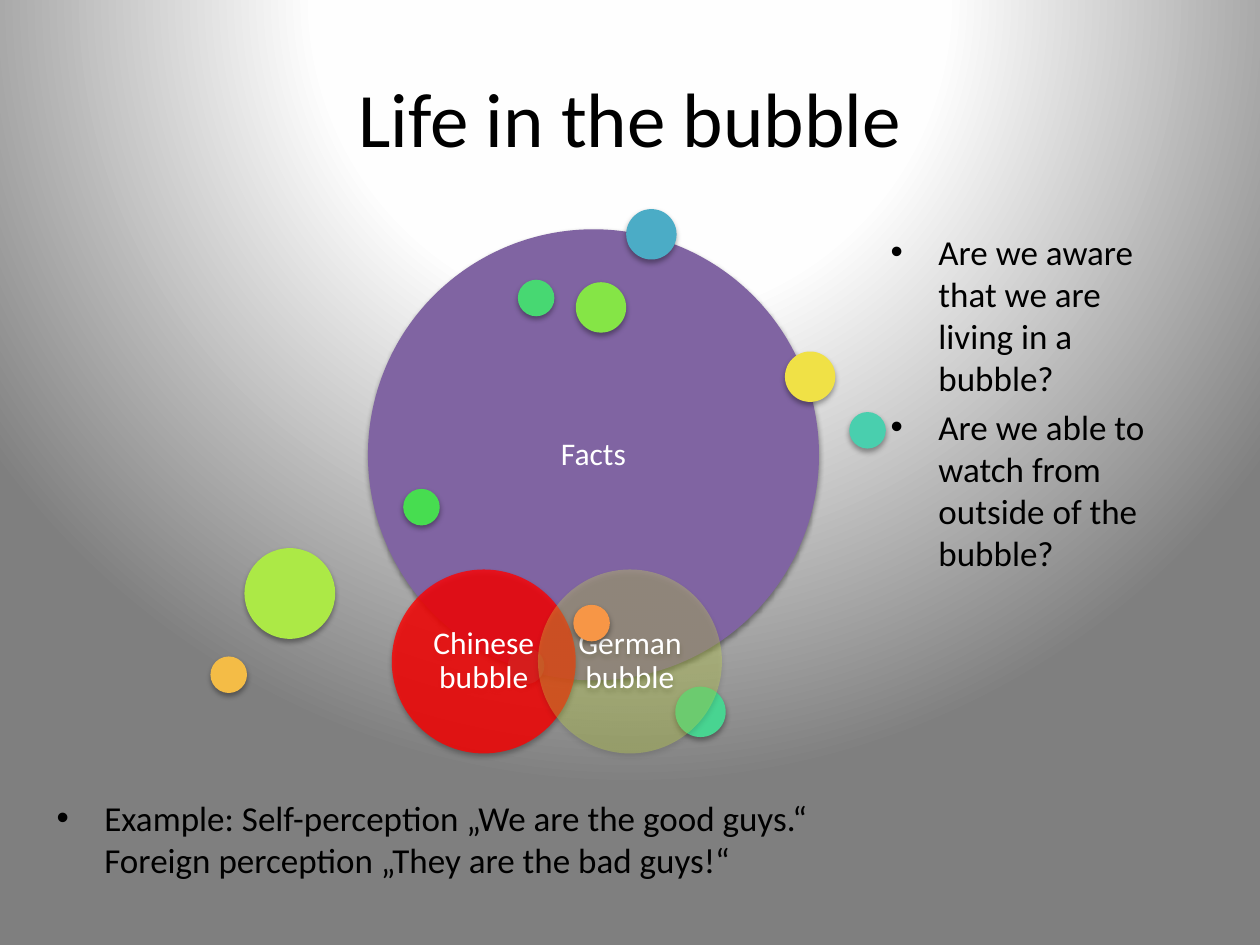
from collections import namedtuple

from lxml import etree
from pptx import Presentation
from pptx.dml.color import RGBColor
from pptx.enum.shapes import MSO_SHAPE
from pptx.enum.text import MSO_ANCHOR, PP_ALIGN
from pptx.oxml import parse_xml
from pptx.oxml.ns import nsdecls, qn
from pptx.util import Inches, Pt

OVAL = MSO_SHAPE.OVAL
MIDDLE = MSO_ANCHOR.MIDDLE
CENTER = PP_ALIGN.CENTER

COLUMNS, ROWS = 100, 75
CELL = Inches(0.1)
FONT = "Calibri"
BLACK = RGBColor(0, 0, 0)
WHITE = RGBColor(255, 255, 255)
PURPLE = RGBColor(0x80, 0x64, 0xA2)
BLUE = RGBColor(0x4B, 0xAC, 0xC6)
CYAN = RGBColor(0x4A, 0xCB, 0xC8)
TEAL = RGBColor(0x49, 0xCF, 0xAE)
MINT = RGBColor(0x48, 0xD4, 0x91)
JADE = RGBColor(0x47, 0xD8, 0x72)
GREEN = RGBColor(0x47, 0xDD, 0x50)
RED = RGBColor(0xFF, 0, 0)
LIME = RGBColor(0x85, 0xE5, 0x46)
CHARTREUSE = RGBColor(0xAC, 0xE9, 0x46)
OLIVE = RGBColor(0xD5, 0xEC, 0x46)
YELLOW = RGBColor(0xF0, 0xE1, 0x46)
AMBER = RGBColor(0xF4, 0xBC, 0x46)
ORANGE = RGBColor(0xF7, 0x96, 0x46)

Box = namedtuple("Box", "left top width height")
Bubble = namedtuple("Bubble", "column row size color label opacity", defaults=("", 100))

SMALL, MEDIUM, LARGE, CULTURE, WORLD = 2.9, 4, 7.2, 14.6, 35.8
BUBBLES = [
    Bubble(12.5, 1.6, WORLD, PURPLE, "Facts"),
    Bubble(33, 0, MEDIUM, BLUE),
    Bubble(23.6, 34.8, SMALL, CYAN),
    Bubble(50.7, 16.1, SMALL, TEAL),
    Bubble(36.9, 37.9, MEDIUM, MINT),
    Bubble(24.4, 5.6, SMALL, JADE),
    Bubble(15.3, 22.2, SMALL, GREEN),
    Bubble(14.4, 28.6, CULTURE, RED, "Chinese bubble", 80),
    Bubble(29, 5.8, MEDIUM, LIME),
    Bubble(2.7, 26.9, LARGE, CHARTREUSE),
    Bubble(26, 28.6, CULTURE, OLIVE, "German bubble", 30),
    Bubble(45.6, 11.3, MEDIUM, YELLOW),
    Bubble(0, 35.5, SMALL, AMBER),
    Bubble(28.8, 31.4, SMALL, ORANGE),
]
QUESTIONS = [
    "Are we aware that we are living in a bubble?",
    "Are we able to watch from outside of the bubble?",
]
EXAMPLE = [
    "Example: Self-perception „We are the good guys.“\v"
    "Foreign perception „They are the bad guys!“",
]


def cells(*counts):
    return [round(count * CELL) for count in counts]


def style(paragraph, size, color):
    paragraph.font.name = FONT
    paragraph.font.size = Pt(size)
    paragraph.font.color.rgb = color


def paint_background(slide):
    stops = "".join(
        f'<a:gs pos="{share * 1000}"><a:srgbClr val="{color}"/></a:gs>'
        for share, color in [(0, "FFFFFF"), (40, "FEFEFE"), (100, "7F7F7F")]
    )
    background = parse_xml(
        f'<p:bg {nsdecls("p", "a")}><p:bgPr><a:gradFill rotWithShape="1">'
        f'<a:gsLst>{stops}</a:gsLst><a:path path="circle">'
        '<a:fillToRect l="50000" t="-80000" r="50000" b="180000"/></a:path>'
        '</a:gradFill><a:effectLst/></p:bgPr></p:bg>'
    )
    slide.element.cSld.insert(0, background)


def add_title(slide, box, wording):
    title = slide.shapes.title
    title.left, title.top, title.width, title.height = cells(*box)
    title.text_frame.text = wording
    title.text_frame.vertical_anchor = MIDDLE
    heading = title.text_frame.paragraphs[0]
    heading.alignment = CENTER
    style(heading, 44, BLACK)


def add_bullets(slide, box, items):
    frame = slide.shapes.add_textbox(*cells(*box)).text_frame
    frame.word_wrap = True
    for index, item in enumerate(items):
        point = frame.paragraphs[0] if index == 0 else frame.add_paragraph()
        point.text = item
        point.space_before = Pt(4)
        style(point, 20, BLACK)
        properties = point._p.get_or_add_pPr()
        indent = Inches(0.38)
        properties.set("marL", str(indent))
        properties.set("indent", str(-indent))
        bullet_font = parse_xml(f'<a:buFont {nsdecls("a")} typeface="Arial"/>')
        bullet = parse_xml(f'<a:buChar {nsdecls("a")} char="•"/>')
        properties.find(qn("a:defRPr")).addprevious(bullet_font)
        bullet_font.addnext(bullet)


def add_shadow(shape, opacity, distance):
    effects = parse_xml(
        f'<a:effectLst {nsdecls("a")}><a:outerShdw blurRad="{Pt(3.1)}" '
        f'dist="{Pt(distance)}" dir="5400000" rotWithShape="0">'
        f'<a:srgbClr val="000000"><a:alpha val="{opacity * 1000}"/></a:srgbClr>'
        '</a:outerShdw></a:effectLst>'
    )
    shape.shadow.inherit = False
    properties = shape._element.spPr
    properties.replace(properties.find(qn("a:effectLst")), effects)


def add_label(shape, wording):
    frame = shape.text_frame
    frame.word_wrap = True
    frame.vertical_anchor = MIDDLE
    frame.margin_left = frame.margin_right = Inches(0.07)
    frame.margin_top = frame.margin_bottom = Inches(0.07)
    frame.text = wording
    label = frame.paragraphs[0]
    label.alignment = CENTER
    label.line_spacing = 0.9
    label.space_after = Pt(6.3)
    style(label, 18, WHITE)


def add_bubbles(slide, box, bubbles):
    cluster = slide.shapes.add_group_shape()
    for bubble in bubbles:
        circle = cluster.shapes.add_shape(OVAL, *cells(
            box.left + bubble.column, box.top + bubble.row, bubble.size, bubble.size))
        circle.fill.solid()
        circle.fill.fore_color.rgb = bubble.color
        circle.line.fill.background()
        if bubble.opacity < 100:
            color = circle._element.spPr.find(qn("a:solidFill"))[0]
            etree.SubElement(color, qn("a:alpha"), val=str(bubble.opacity * 1000))
        if bubble.size == WORLD:
            add_shadow(circle, 38, 1.6)
        else:
            add_shadow(circle, 35, 1.8)
        if bubble.label:
            add_label(circle, bubble.label)


def main():
    deck = Presentation()
    deck.slide_width, deck.slide_height = cells(COLUMNS, ROWS)
    slide = deck.slides.add_slide(deck.slide_layouts.get_by_name("Title Only"))
    paint_background(slide)
    add_title(slide, Box(5, 3, 90, 12.5), "Life in the bubble")
    add_bullets(slide, Box(69.7, 17.8, 23.4, 30.9), QUESTIONS)
    add_bubbles(slide, Box(16.7, 16.6, 53.6, 43.2), BUBBLES)
    add_bullets(slide, Box(3.5, 62.7, 91.5, 10.2), EXAMPLE)
    deck.save("out.pptx")


if __name__ == "__main__":
    main()
